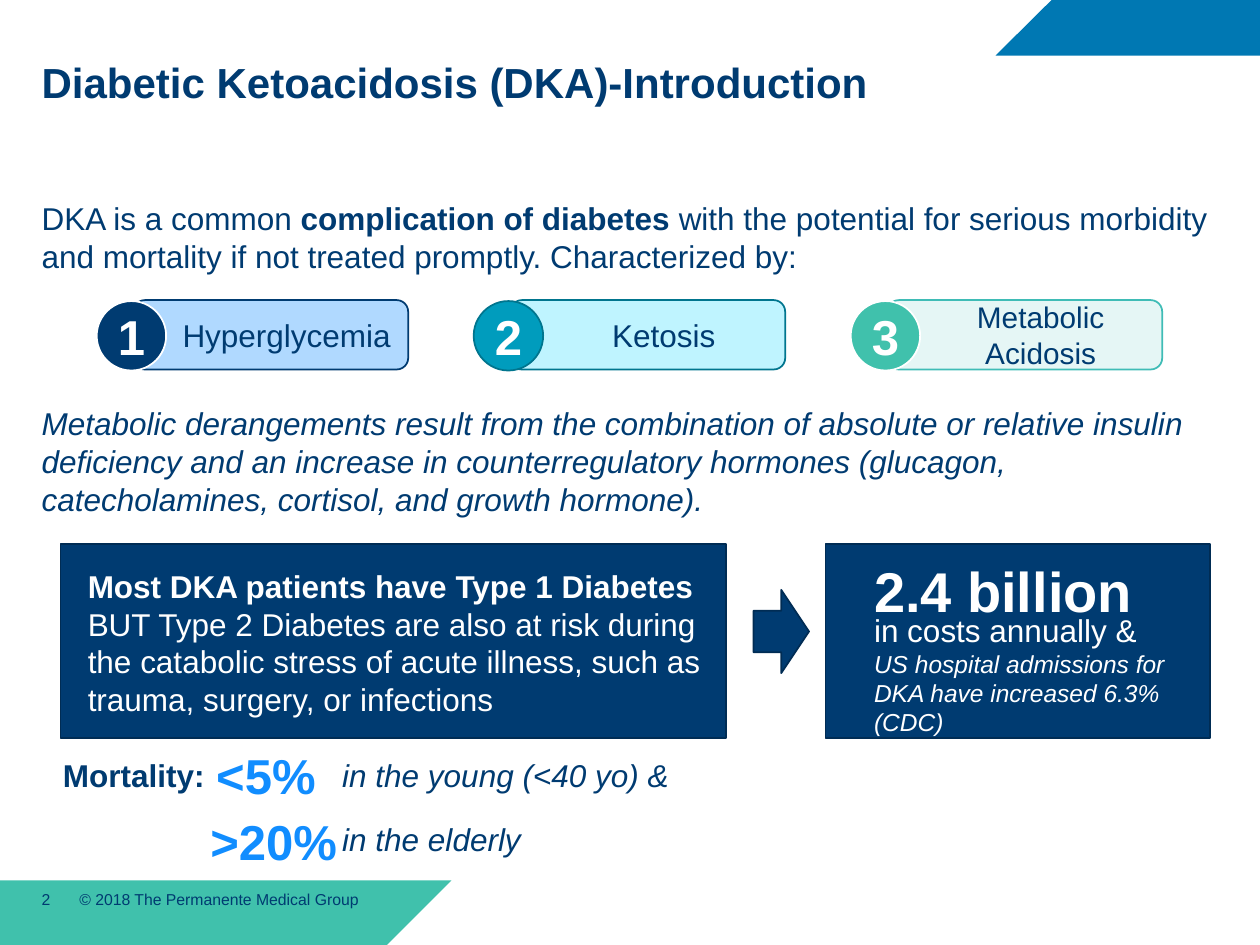
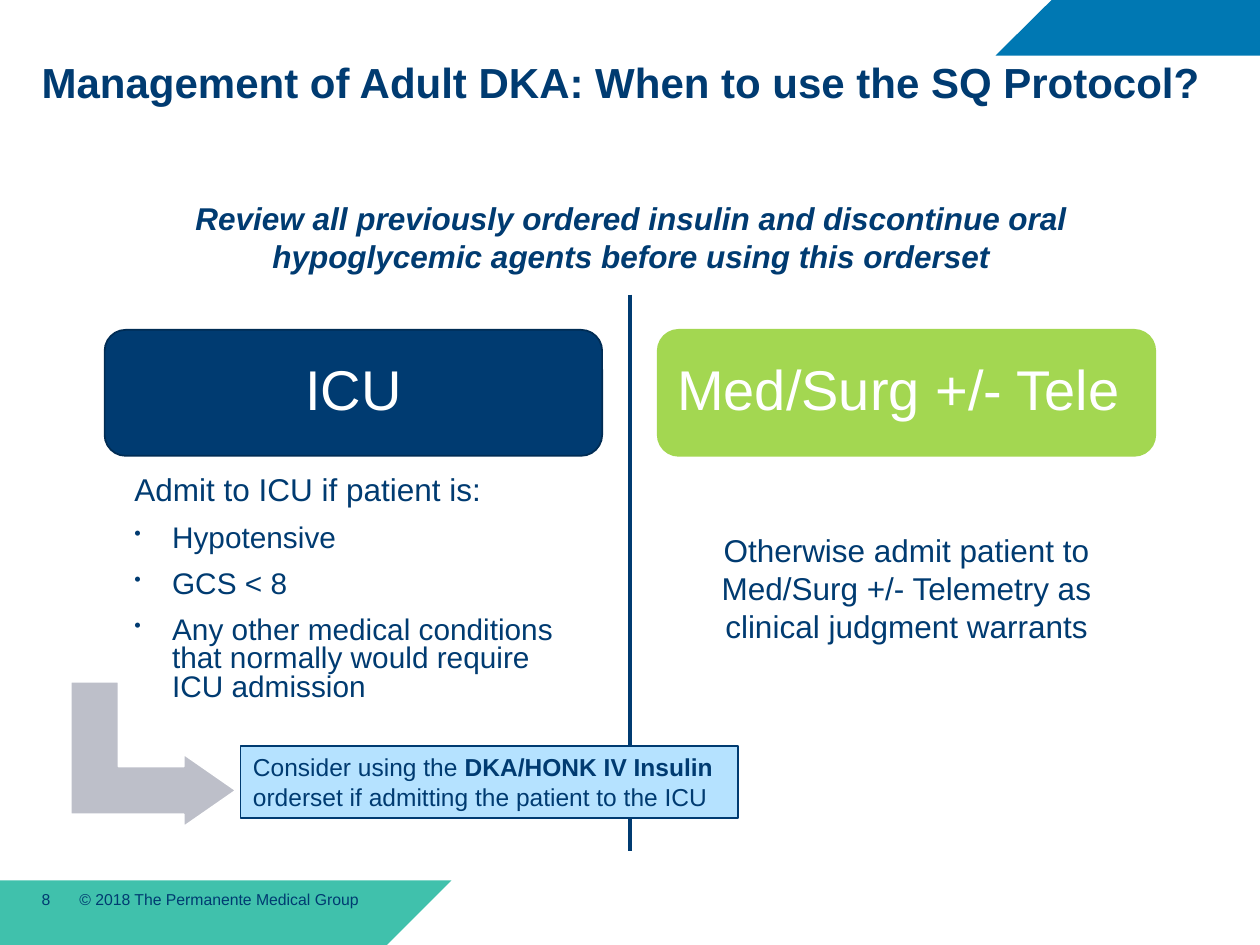
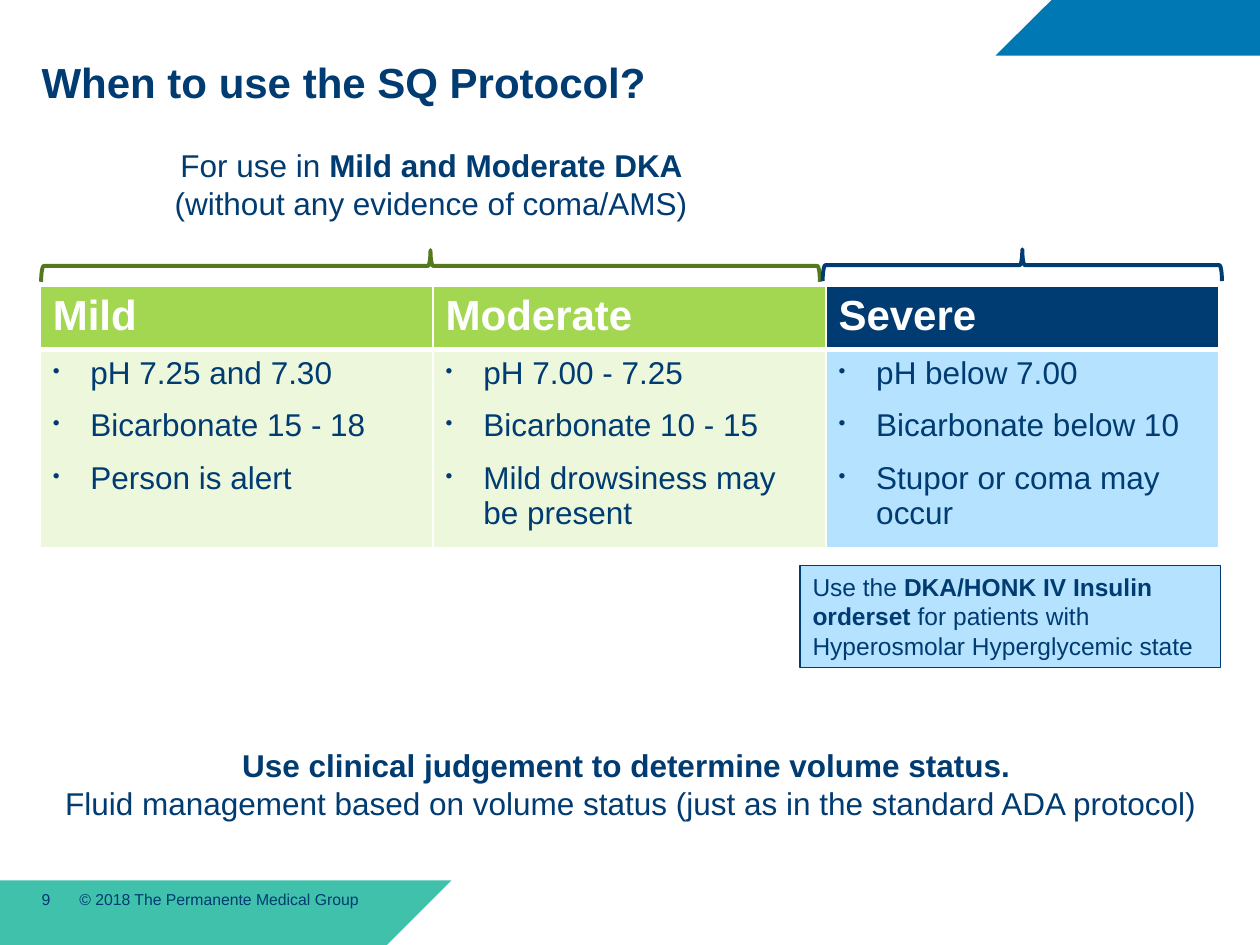
"""Build three slides on diabetic ketoacidosis and its insulin protocol."""
from dataclasses import dataclass

import lxml.etree
import pptx
import pptx.dml.color
import pptx.enum.shapes
import pptx.enum.text
import pptx.oxml
import pptx.oxml.ns
import pptx.util

Cm = pptx.util.Cm
Pt = pptx.util.Pt
SHAPE = pptx.enum.shapes.MSO_SHAPE
ALIGN = pptx.enum.text.PP_ALIGN
ANCHOR = pptx.enum.text.MSO_ANCHOR
qn = pptx.oxml.ns.qn


@dataclass(frozen=True)
class Theme:
    font: str = "Arial"
    navy: str = "003B71"
    navy_edge: str = "002C54"
    white: str = "FFFFFF"
    blue: str = "0078B3"
    bright_blue: str = "118DFF"
    pale_blue: str = "B5E2FF"
    sky: str = "B0D9FF"
    cyan: str = "009CBD"
    cyan_edge: str = "00758E"
    pale_cyan: str = "BFF4FF"
    teal: str = "40C1AC"
    teal_edge: str = "3FBCB6"
    pale_teal: str = "E5F6F5"
    green: str = "A3D751"
    pale_green: str = "EDF7DC"
    dark_green: str = "54781C"
    grey: str = "BDBFC9"
    title: int = 24
    body: int = 18
    listing: int = 17
    note: int = 14
    footer: int = 9
    heading: int = 32
    figure: int = 28


THEME = Theme()
FOOTER = "© 2018 The Permanente Medical Group"


def rgb(color):
    return pptx.dml.color.RGBColor.from_string(color)


def add_bullet(paragraph):
    """Give the paragraph a small round bullet with a hanging indent."""
    properties = paragraph._p.get_or_add_pPr()
    properties.set("marL", str(Cm(0.76)))
    properties.set("indent", str(-Cm(0.76)))
    lxml.etree.SubElement(properties, qn("a:buSzPct")).set("val", "65000")
    lxml.etree.SubElement(properties, qn("a:buChar")).set("char", "•")


def write(paragraph, text, size=THEME.body, color=THEME.navy, bold=False, italic=False,
          align=None, spacing=None, before=None, bullet=False):
    """Fill one paragraph; parts between double asterisks are bold."""
    if bullet:
        add_bullet(paragraph)
    if align is not None:
        paragraph.alignment = align
    if spacing:
        paragraph.line_spacing = spacing
    if before:
        paragraph.space_before = Pt(before)
    font = paragraph.font
    font.name, font.size, font.italic = THEME.font, Pt(size), italic
    font.color.rgb = rgb(color)
    parts = text.split("**")
    if len(parts) == 1:
        font.bold = bold
    for index, part in enumerate(parts):
        if part:
            run = paragraph.add_run()
            run.text = part
            if len(parts) > 1:
                run.font.bold = index % 2 == 1


def write_bullets(frame, items, started=False, **style):
    """Add bulleted paragraphs, spaced from whatever stands above."""
    for index, item in enumerate(items):
        first = index == 0 and not started
        paragraph = frame.paragraphs[0] if first else frame.add_paragraph()
        write(paragraph, item, bullet=True, before=None if first else 10, **style)


def add_text(slide, box, text, inset=True, wrap=True, **style):
    """Add a text box with one paragraph and return its frame."""
    frame = slide.shapes.add_textbox(*map(Cm, box)).text_frame
    frame.word_wrap = wrap
    if not inset:
        frame.margin_left = frame.margin_right = frame.margin_top = frame.margin_bottom = 0
    write(frame.paragraphs[0], text, **style)
    return frame


def paint(shape, fill, edge, width=1):
    """Set fill and outline, with None for neither."""
    shape.shadow.inherit = False
    for part, color in ((shape.fill, fill), (shape.line.fill, edge)):
        if color:
            part.solid()
            part.fore_color.rgb = rgb(color)
        else:
            part.background()
    if edge:
        shape.line.width = Pt(width)


def add_panel(slide, kind, box, fill, edge, width=1, rotation=0):
    """Add a painted preset shape."""
    panel = slide.shapes.add_shape(kind, *map(Cm, box))
    panel.rotation = rotation
    paint(panel, fill, edge, width)
    return panel


def label(panel, text, anchor=ANCHOR.MIDDLE, **style):
    """Write one paragraph inside a panel."""
    frame = panel.text_frame
    frame.word_wrap = True
    frame.vertical_anchor = anchor
    write(frame.paragraphs[0], text, **style)


def add_callout(slide, box, text):
    """Add a pale blue note about an orderset."""
    note = add_panel(slide, SHAPE.RECTANGLE, box, THEME.pale_blue, THEME.navy, 0.75)
    label(note, text, ANCHOR.TOP, size=THEME.note, align=ALIGN.LEFT)


def add_band(slide, corners, fill):
    """Add a slanted colour band through the given corners."""
    start, *rest = [(Cm(x), Cm(y)) for x, y in corners]
    builder = slide.shapes.build_freeform(*start)
    builder.add_line_segments(rest)
    paint(builder.convert_to_shape(), fill, None)


def add_slide(deck, title, number):
    """Add a blank slide with bands, footer and title."""
    slide = deck.slides.add_slide(deck.slide_layouts[6])
    add_band(slide, [(0, 17.75), (9.1, 17.75), (7.8, 19.05), (0, 19.05)], THEME.teal)
    add_band(slide, [(21.2, 0), (25.4, 0), (25.4, 1.12), (20.07, 1.12)], THEME.blue)
    add_text(slide, (0.84, 17.93, 0.64, 0.64), str(number), False, size=THEME.footer)
    add_text(slide, (1.6, 17.93, 8, 0.64), FOOTER, False, size=THEME.footer)
    add_text(slide, (0.84, 1.3, 23.75, 2.11), title, False,
             size=THEME.title, bold=True, spacing=0.85)
    return slide


def add_features(slide):
    """Add the row of numbered features of DKA."""
    features = [
        ("Hyperglycemia", THEME.body, THEME.sky, THEME.navy, THEME.navy, THEME.white),
        ("Ketosis", THEME.body, THEME.pale_cyan, THEME.cyan_edge, THEME.cyan, THEME.cyan_edge),
        ("Metabolic Acidosis", THEME.listing, THEME.pale_teal, THEME.teal_edge,
         THEME.teal, THEME.white),
    ]
    for index, (name, size, fill, edge, disc_fill, disc_edge) in enumerate(features):
        shift = 7.6 * index
        feature = add_panel(slide, SHAPE.ROUNDED_RECTANGLE, (2.69 + shift, 6.05, 5.54, 1.4),
                            fill, edge)
        feature.text_frame.margin_left = Cm(0.89)
        label(feature, name, size=size, align=ALIGN.CENTER)
        disc = add_panel(slide, SHAPE.OVAL, (1.95 + shift, 6.07, 1.4, 1.4), disc_fill, disc_edge)
        disc.text_frame.margin_left = disc.text_frame.margin_right = 0
        label(disc, str(index + 1), size=THEME.figure, color=THEME.white, bold=True,
              align=ALIGN.CENTER)


def add_divider(slide, x, top, bottom):
    """Add a vertical line between two columns."""
    divider = slide.shapes.add_connector(pptx.enum.shapes.MSO_CONNECTOR.STRAIGHT,
                                         Cm(x), Cm(top), Cm(x), Cm(bottom))
    divider.line.color.rgb = rgb(THEME.navy)
    divider.line.width = Pt(2.25)
    lxml.etree.SubElement(divider._element.spPr, qn("a:effectLst"))


def style_cell(cell, fill, bottom):
    """Give a cell white borders and a plain fill."""
    properties = cell._tc.get_or_add_tcPr()
    for side, width in (("L", 1), ("R", 1), ("T", 1), ("B", bottom)):
        border = lxml.etree.SubElement(properties, qn(f"a:ln{side}"), w=str(Pt(width)))
        solid = lxml.etree.SubElement(border, qn("a:solidFill"))
        lxml.etree.SubElement(solid, qn("a:srgbClr"), val=THEME.white)
    cell.fill.solid()
    cell.fill.fore_color.rgb = rgb(fill)


def add_severity_table(slide):
    """Add the table of criteria by severity."""
    severities = [
        ("Mild", THEME.green, THEME.pale_green,
         ["pH 7.25 and 7.30", "Bicarbonate 15 - 18", "Person is alert"]),
        ("Moderate", THEME.green, THEME.pale_green,
         ["pH 7.00 - 7.25", "Bicarbonate 10 - 15", "Mild drowsiness may be present"]),
        ("Severe", THEME.navy, THEME.pale_blue,
         ["pH below 7.00", "Bicarbonate below 10", "Stupor or coma may occur"]),
    ]
    table = slide.shapes.add_table(2, len(severities), Cm(0.81), Cm(5.77),
                                   Cm(23.76), Cm(4.98)).table
    table.rows[0].height, table.rows[1].height = Cm(1.18), Cm(3.8)
    for column, (name, head_fill, fill, criteria) in enumerate(severities):
        head, body = table.cell(0, column), table.cell(1, column)
        style_cell(head, head_fill, 3)
        style_cell(body, fill, 1)
        write(head.text_frame.paragraphs[0], name, THEME.title, THEME.white, bold=True)
        write_bullets(body.text_frame, criteria)


def build_introduction(deck):
    """Build the slide that introduces DKA."""
    slide = add_slide(deck, "Diabetic Ketoacidosis (DKA)-Introduction", 2)
    add_text(slide, (0.84, 4.01, 23.75, 2),
             "DKA is a common **complication of diabetes **with the potential for serious "
             "morbidity and mortality if not treated promptly. Characterized by:", False)
    add_text(slide, (0.84, 8.15, 23.75, 2.6),
             "Metabolic derangements result from the combination of absolute or relative "
             "insulin deficiency and an increase in counterregulatory hormones (glucagon, "
             "catecholamines, cortisol, and growth hormone).", False, italic=True)
    add_features(slide)
    for left, width in ((1.22, 13.41), (16.64, 7.75)):
        add_panel(slide, SHAPE.RECTANGLE, (left, 10.97, width, 3.91), THEME.navy, THEME.navy_edge)
    add_text(slide, (17.37, 11.1, 5.74, 1.5), "2.4 billion",
             size=THEME.heading, color=THEME.white, bold=True)
    costs = add_text(slide, (17.37, 12.19, 7.01, 2.82), "in costs annually &", color=THEME.white)
    write(costs.add_paragraph(), "US hospital admissions for DKA have increased 6.3% (CDC)",
          THEME.note, THEME.white, italic=True)
    add_text(slide, (1.52, 11.3, 13.41, 3.33),
             "**Most DKA patients have Type 1 Diabetes **BUT Type 2 Diabetes are also at risk "
             "during the catabolic stress of acute illness, such as trauma, surgery, or "
             "infections", color=THEME.white)
    add_panel(slide, SHAPE.DOWN_ARROW, (14.91, 12.17, 1.68, 1.12),
              THEME.navy, THEME.navy_edge, rotation=270)
    add_text(slide, (1.02, 15.11, 3.63, 1.02), "Mortality:", bold=True)
    for box, rate in (((4.11, 14.91, 2.54, 1.45), "<5%"), ((3.99, 16.23, 3.1, 1.45), ">20%")):
        add_text(slide, box, rate, wrap=False, size=THEME.figure, color=THEME.bright_blue,
                 bold=True)
    for box, group in (((6.65, 15.11, 7.34, 1.02), "in the young (<40 yo) &"),
                       ((6.65, 16.41, 4.14, 1.02), "in the elderly")):
        add_text(slide, box, group, wrap=False, italic=True)


def build_admission(deck):
    """Build the slide on where to admit the patient."""
    slide = add_slide(deck, "Management of Adult DKA: When to use the SQ Protocol?", 8)
    add_text(slide, (1.93, 4.01, 21.59, 2.57),
             "Review all previously ordered insulin and discontinue oral hypoglycemic agents "
             "before using this orderset", False, bold=True, italic=True, align=ALIGN.CENTER)
    for left, ward, fill, edge in ((2.11, "ICU", THEME.navy, THEME.navy_edge),
                                   (13.26, "Med/Surg +/- Tele ", THEME.green, THEME.green)):
        heading = add_panel(slide, SHAPE.ROUNDED_RECTANGLE, (left, 6.65, 10.03, 2.54), fill, edge)
        label(heading, ward, size=THEME.heading, color=THEME.white, align=ALIGN.CENTER,
              spacing=0.9)
    criteria = add_text(slide, (2.46, 9.35, 9.32, 5.03), "Admit to ICU if patient is:")
    write_bullets(criteria, ["Hypotensive", "GCS < 8",
                             "Any other medical conditions that normally would require "
                             "ICU admission"],
                  started=True, size=THEME.listing, spacing=0.8)
    add_text(slide, (13.26, 10.59, 10.03, 2.57),
             "Otherwise admit patient to Med/Surg +/- Telemetry as clinical judgment warrants",
             align=ALIGN.CENTER)
    add_divider(slide, 12.7, 5.94, 17.15)
    add_callout(slide, (4.85, 15.04, 10.03, 1.45),
                "Consider using the **DKA/HONK IV Insulin **orderset if admitting the patient "
                "to the ICU")
    turn = add_panel(slide, SHAPE.BENT_UP_ARROW, (1.63, 13.54, 2.92, 3.33),
                     THEME.grey, THEME.white, rotation=90)
    for index, value in enumerate((0.33, 0.25, 0.36)):
        turn.adjustments[index] = value


def build_severity(deck):
    """Build the slide on severity criteria."""
    slide = add_slide(deck, "When to use the SQ Protocol?", 9)
    advice = add_text(slide, (0.84, 15.04, 23.75, 1.88),
                      "Use clinical judgement to determine volume status. ", False,
                      bold=True, align=ALIGN.CENTER)
    write(advice.add_paragraph(),
          "Fluid management based on volume status (just as in the standard ADA protocol)",
          align=ALIGN.CENTER)
    add_severity_table(slide)
    add_callout(slide, (16.13, 11.4, 8.48, 2.06),
                "Use the **DKA/HONK IV Insulin orderset **for patients with Hyperosmolar "
                "Hyperglycemic state")
    for box, color in (((8.36, -2.49, 0.64, 15.7), THEME.dark_green),
                       ((20.29, 1.32, 0.64, 8.05), THEME.navy)):
        add_panel(slide, SHAPE.RIGHT_BRACE, box, None, color, 2.25, 270)
    add_text(slide, (2.34, 2.82, 12.7, 1.8),
             "For use in **Mild and Moderate DKA **(without any evidence of coma/AMS)",
             align=ALIGN.CENTER)


def main():
    deck = pptx.Presentation()
    deck.slide_width, deck.slide_height = Cm(25.4), Cm(19.05)
    build_introduction(deck)
    build_admission(deck)
    build_severity(deck)
    deck.save("out.pptx")


if __name__ == "__main__":
    main()
